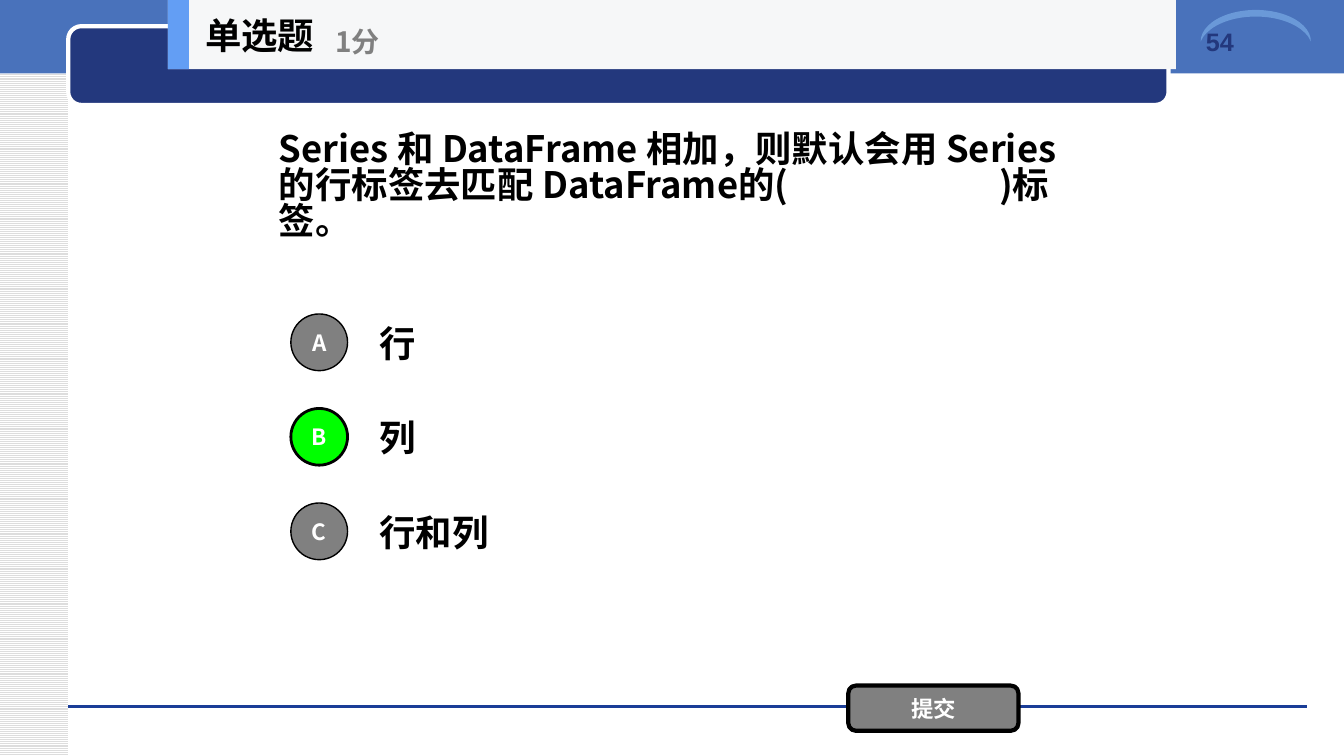
from lxml.etree import SubElement
from pptx import Presentation
from pptx.dml.color import RGBColor
from pptx.enum.dml import MSO_PATTERN
from pptx.enum.shapes import MSO_CONNECTOR, MSO_SHAPE
from pptx.enum.text import MSO_ANCHOR, MSO_AUTO_SIZE, PP_ALIGN
from pptx.oxml.ns import qn
from pptx.util import Pt

EMU_PER_PX = 9525
BLACK, WHITE, GREY, GREEN, NAVY = "000000", "FFFFFF", "808080", "00FF00", "23387D"


def px(length):
    return length * EMU_PER_PX


def color(hex_value):
    return RGBColor.from_string(hex_value)


class QuizSlide:
    font = "Noto Sans CJK SC"

    def __init__(self, deck):
        self.slide = deck.slides.add_slide(deck.slide_layouts[5])
        self.shapes = self.slide.shapes

    def set_text(self, holder, text, size, ink, align=PP_ALIGN.LEFT,
                 anchor=MSO_ANCHOR.MIDDLE, font=None):
        frame = holder.text_frame
        frame.text = text
        frame.word_wrap = True
        frame.auto_size = MSO_AUTO_SIZE.NONE
        frame.vertical_anchor = anchor
        paragraph = frame.paragraphs[0]
        paragraph.alignment = align
        for run in paragraph.runs:
            run.font.size = Pt(size)
            run.font.bold = True
            run.font.color.rgb = color(ink)
            run.font.name = font or self.font
            SubElement(run.font._element, qn("a:ea"), typeface=font or self.font)
        return paragraph

    def question(self, text, left, top, width, height, blank_end):
        title = self.shapes.title
        title.left, title.top = px(left), px(top)
        title.width, title.height = px(width), px(height)
        paragraph = self.set_text(title, text, 26, BLACK)
        paragraph.line_spacing = 0.83
        tabs = SubElement(paragraph._p.get_or_add_pPr(), qn("a:tabLst"))
        SubElement(tabs, qn("a:tab"), pos=str(px(blank_end)), algn="l")

    def label(self, text, left, top, width, height, size=26, ink=BLACK, **style):
        box = self.shapes.add_textbox(px(left), px(top), px(width), px(height))
        self.set_text(box, text, size, ink, **style)

    def shape(self, kind, left, top, width, height, fill, line=None, weight=1):
        item = self.shapes.add_shape(kind, px(left), px(top), px(width), px(height))
        item.shadow.inherit = False
        item.fill.solid()
        item.fill.fore_color.rgb = color(fill)
        if line:
            item.line.color.rgb = color(line)
            item.line.width = Pt(weight)
        else:
            item.line.fill.background()
        return item

    def button(self, kind, text, left, top, width, height, fill, weight):
        item = self.shape(kind, left, top, width, height, fill, BLACK, weight)
        self.set_text(item, text, 16, WHITE, PP_ALIGN.CENTER)

    def striped_band(self, left, top, width, height, stripe):
        band = self.shape(MSO_SHAPE.RECTANGLE, left, top, width, height, WHITE)
        band.fill.patterned()
        band.fill.pattern = MSO_PATTERN.LIGHT_HORIZONTAL
        band.fill.fore_color.rgb = color(stripe)
        band.fill.back_color.rgb = color(WHITE)

    def rule(self, left, right, y, ink):
        line = self.shapes.add_connector(
            MSO_CONNECTOR.STRAIGHT, px(left), px(y), px(right), px(y))
        line.line.color.rgb = color(ink)
        line.line.width = Pt(0)
        SubElement(line._element.spPr, qn("a:effectLst"))


def main():
    deck = Presentation()
    deck.slide_width, deck.slide_height = px(1280), px(720)
    quiz = QuizSlide(deck)

    quiz.striped_band(0, 0, 65, 720, "DDDDDD")
    quiz.shape(MSO_SHAPE.RECTANGLE, 0, 0, 1280, 70, "4972BB")
    quiz.rule(65, 1245, 673, "1A3D97")
    quiz.shape(MSO_SHAPE.ROUNDED_RECTANGLE, 65, 25, 1048, 75, NAVY, WHITE, 3)
    crescent = quiz.shape(MSO_SHAPE.MOON, 1181, -28, 30, 105, "6A99D8")
    crescent.rotation = 90
    crescent.adjustments[0] = 0.21
    quiz.label("54", 1139, 20, 116, 68, 18, NAVY,
               anchor=MSO_ANCHOR.TOP, font="Arial")

    quiz.question("Series 和 DataFrame 相加，则默认会用 "
                  "Series的行标签去匹配 DataFrame的(\t)标签。",
                  256, 66, 768, 225, 686)

    answers = [("A", "行", GREY, 1), ("B", "列", GREEN, 2), ("C", "行和列", GREY, 1)]
    for row, (letter, answer, fill, weight) in enumerate(answers):
        top = 299 + 90 * row
        quiz.button(MSO_SHAPE.OVAL, letter, 277, top, 54, 54, fill, weight)
        quiz.label(answer, 352, top - 6, 672, 67)
    quiz.button(MSO_SHAPE.ROUNDED_RECTANGLE, "提交", 808, 653, 162, 43, GREY, 3)

    quiz.shape(MSO_SHAPE.RECTANGLE, 160, 0, 960, 66, "F6F7F8")
    quiz.shape(MSO_SHAPE.RECTANGLE, 160, 0, 20, 66, "639EF4")
    quiz.label("单选题", 186, 0, 200, 66)
    quiz.label("1分", 310, 12, 240, 54, 20, GREY)

    deck.save("out.pptx")


if __name__ == "__main__":
    main()
